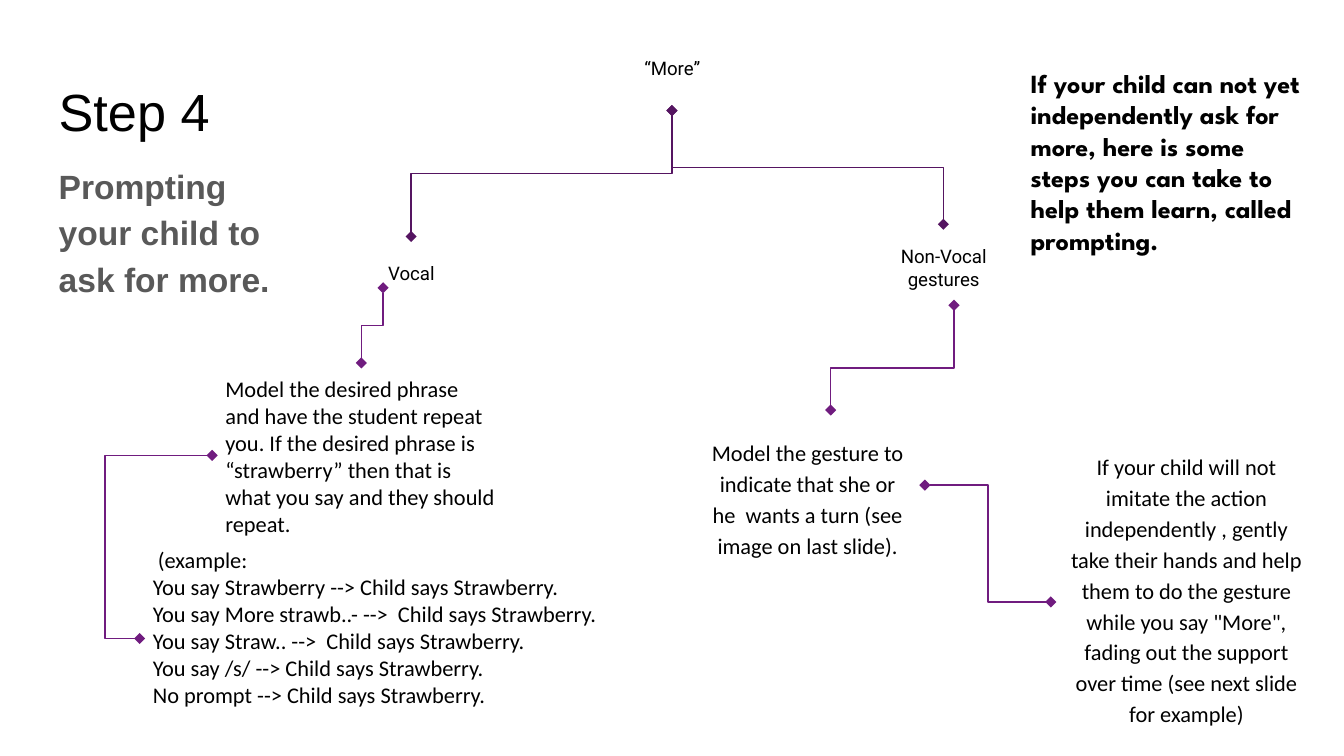
from dataclasses import dataclass

from lxml import etree
from pptx import Presentation
from pptx.dml.color import RGBColor
from pptx.enum.shapes import MSO_CONNECTOR
from pptx.enum.text import MSO_ANCHOR, MSO_AUTO_SIZE, PP_ALIGN
from pptx.oxml.ns import qn
from pptx.util import Cm, Pt

ELBOW = MSO_CONNECTOR.ELBOW
TOP, MID = MSO_ANCHOR.TOP, MSO_ANCHOR.MIDDLE
LEFT, MIDDLE = PP_ALIGN.LEFT, PP_ALIGN.CENTER
FIXED = MSO_AUTO_SIZE.NONE


@dataclass(frozen=True)
class Theme:
    ink: str = "000000"
    grey: str = "595959"
    dark: str = "551561"
    plum: str = "701C7F"
    line: float = 0.75
    pad: float = 0.25
    sans: str = "Arial"
    label: str = "Roboto"
    text: str = "Calibri"
    accent: str = "League Spartan"


T = Theme()

# Text styles: font values, paragraph values, anchor
STYLES = {
    "title": (dict(name=T.sans, size=Pt(28), bold=False), T.ink,
              dict(alignment=LEFT), TOP),
    "lead": (dict(name=T.sans, size=Pt(18), bold=True), T.grey,
             dict(alignment=LEFT, line_spacing=1.15, space_after=Pt(16)), TOP),
    "label": (dict(name=T.label, size=Pt(10)), T.ink,
              dict(alignment=MIDDLE), MID),
    "step": (dict(name=T.text, size=Pt(12)), T.ink,
             dict(alignment=MIDDLE, line_spacing=1.15), MID),
    "phrase": (dict(name=T.text, size=Pt(12)), T.ink,
               dict(alignment=LEFT), MID),
    "list": (dict(name=T.text, size=Pt(12)), T.ink,
             dict(alignment=LEFT), TOP),
    "intro": (dict(name=T.accent, size=Pt(14), bold=True), T.ink,
              dict(alignment=LEFT), TOP),
}

# Content: style, box (left, top, width, height in cm), paragraphs
TITLE = ("title", (0.86, 1.24, 23.67, 1.6), ["Step 4"])
TEXTS = [
    ("lead", (0.86, 2.77, 5.13, 3.28),
     ["Prompting your child to ask for more."]),
    ("label", (10.57, 0.48, 4.27, 1.63), ["“More”"]),
    ("label", (5.64, 4.47, 4.27, 1.4), ["Vocal"]),
    ("label", (15.7, 4.24, 4.27, 1.63), ["Non-Vocal", "gestures"]),
    ("step", (19.96, 8.43, 4.93, 5.38),
     ["If your child will not imitate the action independently , gently take "
      "their hands and help them to do the gesture while you say \"More\", "
      "fading out the support over time (see next slide for example)"]),
    ("step", (13.13, 7.75, 4.27, 3.28),
     ["Model the gesture to indicate that she or he  wants a turn "
      "(see image on last slide)."]),
    ("phrase", (4.01, 6.86, 5.64, 3.53),
     ["Model the desired phrase and have the student repeat you. If the "
      "desired phrase is “strawberry” then that is what you say and they "
      "should repeat."]),
    ("list", (2.64, 10.08, 9.37, 3.96),
     [" (example:",
      "You say Strawberry --> Child says Strawberry.",
      "You say More strawb..- -->  Child says Strawberry.",
      "You say Straw.. -->  Child says Strawberry.",
      "You say /s/ --> Child says Strawberry.",
      "No prompt --> Child says Strawberry."]),
    ("intro", (19.23, 1.02, 5.64, 4.85),
     ["If your child can not yet independently ask for more, here is some "
      "steps you can take to help them learn, called prompting."]),
]

# Links: start, end (cm), leaves upright, bend as share of the run, colour
LINKS = [
    ((12.7, 2.09), (17.83, 4.24), True, 0.5, T.dark),
    ((6.83, 6.86), (7.24, 5.44), True, 0.5, T.plum),
    ((17.48, 9.17), (19.86, 11.38), False, 0.5, T.plum),
    ((7.77, 4.47), (12.7, 2.09), True, 0.5, T.dark),
    ((15.7, 7.75), (18.03, 5.77), True, 0.4, T.plum),
    ((2.64, 12.07), (4.01, 8.61), False, -0.48, T.plum),
]


def assign(target, values):
    for key, value in values.items():
        setattr(target, key, value)


def write(shape, style, box, lines):
    font, hue, para, anchor = STYLES[style]
    assign(shape, dict(zip(("left", "top", "width", "height"), map(Cm, box))))
    frame = shape.text_frame
    assign(frame, dict(word_wrap=True, auto_size=FIXED, vertical_anchor=anchor))
    for side in ("left", "top", "right", "bottom"):
        setattr(frame, f"margin_{side}", Cm(T.pad))
    for i, line in enumerate(lines):
        item = frame.add_paragraph() if i else frame.paragraphs[0]
        assign(item, para)
        run = item.add_run()
        run.text = line
        assign(run.font, font)
        run.font.color.rgb = RGBColor.from_string(hue)


def link(shapes, start, end, upright, bend, hue):
    (x1, y1), (x2, y2) = start, end
    if upright:  # lay the box on its side about its centre, then turn it
        mx, my = (x1 + x2) / 2, (y1 + y2) / 2
        rise, run = (y1 - y2) / 2, (x2 - x1) / 2
        x1, y1, x2, y2 = mx - rise, my - run, mx + rise, my + run
    wire = shapes.add_connector(ELBOW, Cm(x1), Cm(y1), Cm(x2), Cm(y2))
    wire.line.color.rgb = RGBColor.from_string(hue)
    wire.line.width = Pt(T.line)
    props = wire.element.spPr
    if upright:
        props.find(qn("a:xfrm")).set("rot", str(270 * 60000))
    guide = etree.SubElement(props.find(".//" + qn("a:avLst")), qn("a:gd"))
    guide.set("name", "adj1")
    guide.set("fmla", f"val {round(bend * 100000)}")
    for tip in ("a:headEnd", "a:tailEnd"):
        etree.SubElement(props.find(qn("a:ln")), qn(tip)).set("type", "diamond")
    etree.SubElement(props, qn("a:effectLst"))


def main():
    deck = Presentation()
    deck.slide_width, deck.slide_height = Cm(25.4), Cm(14.29)
    slide = deck.slides.add_slide(deck.slide_layouts[5])
    shapes = slide.shapes

    # Heading
    write(shapes.title, *TITLE)

    # Tree links behind the texts
    for row in LINKS:
        link(shapes, *row)

    # Texts
    for style, box, lines in TEXTS:
        write(shapes.add_textbox(*map(Cm, box)), style, box, lines)

    deck.save("out.pptx")


if __name__ == "__main__":
    main()
